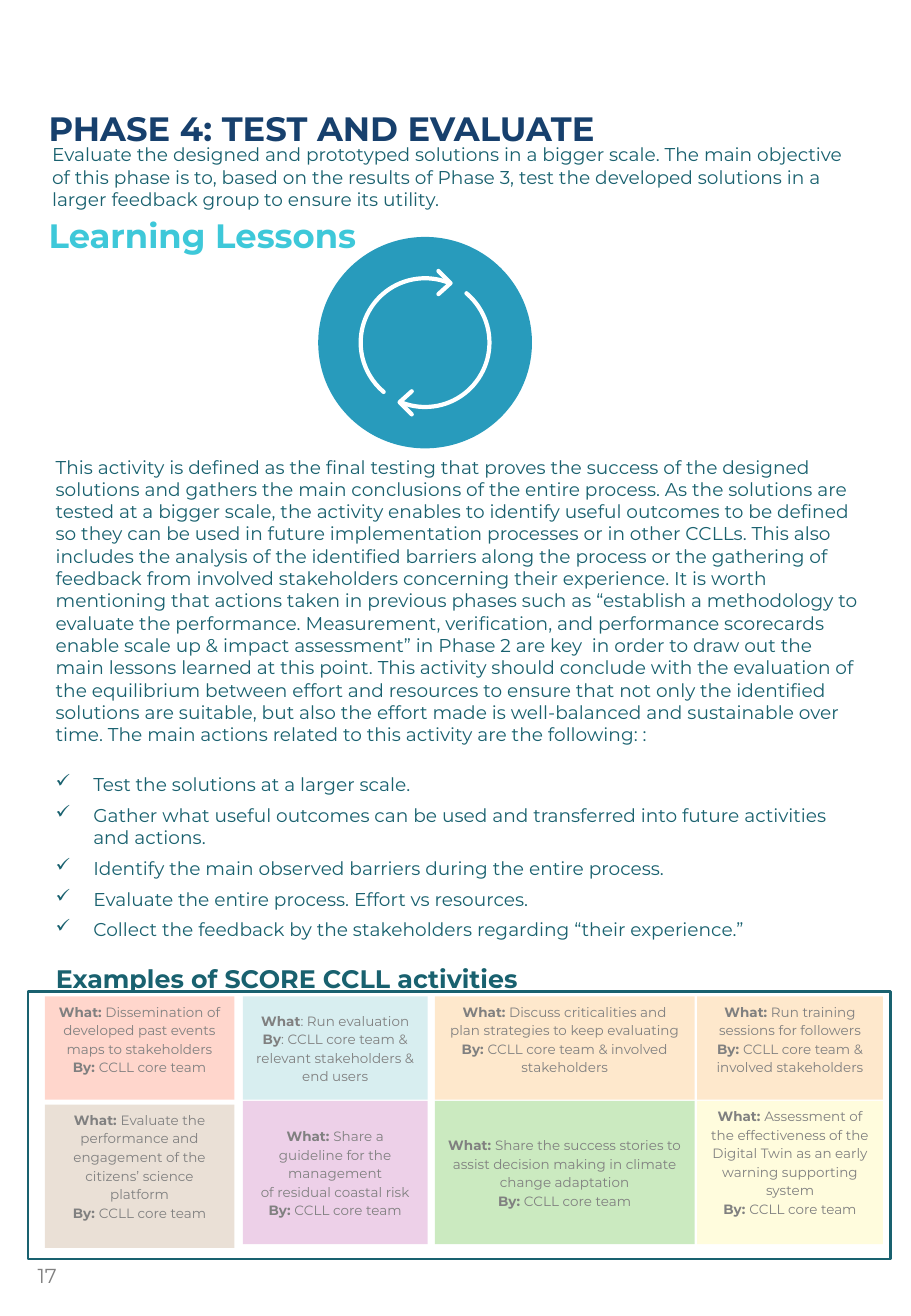
from dataclasses import dataclass

from lxml import etree
from pptx import Presentation
from pptx import util as u
from pptx.dml.color import RGBColor
from pptx.enum import shapes, text
from pptx.oxml.ns import qn


@dataclass(frozen=True)
class Theme:
    font: str = "Montserrat"
    teal: str = "19616F"
    navy: str = "17406D"
    cyan: str = "3EC8D9"
    blue: str = "289BBC"
    grey: str = "808080"
    white: str = "FFFFFF"
    heading: float = 20
    subheading: float = 15
    folio: float = 12
    body: float = 11
    card: float = 8


THEME = Theme()
TIGHT = (0.06, 0.02, 0.06, 0.03)
CARD_INSETS = (0.1, 0.04, 0.1, 0.05)
CORE_TEAM = ("By: ", "CCLL core team")
INVOLVED = ("By: ", "CCLL core team & involved stakeholders")

INTRO = (
    "Evaluate the designed and prototyped solutions in a bigger scale. The main objective of "
    "this phase is to, based on the results of Phase 3, test the developed solutions in a "
    "larger feedback group to ensure its utility."
)
ACTIVITY_SENTENCES = [
    "This activity is defined as the final testing that proves the success of the designed "
    "solutions and gathers the main conclusions of the entire process.",
    "As the solutions are tested at a bigger scale, the activity enables to identify useful "
    "outcomes to be defined so they can be used in future implementation processes or in other "
    "CCLLs.",
    "This also includes the analysis of the identified barriers along the process or the "
    "gathering of feedback from involved stakeholders concerning their experience.",
    "It is worth mentioning that actions taken in previous phases such as “establish a "
    "methodology to evaluate the performance.",
    "Measurement, verification, and performance scorecards enable scale up & impact assessment” "
    "in Phase 2 are key  in order to draw out the main lessons learned at this point.",
    "This activity should conclude with the evaluation of the equilibrium between effort and "
    "resources to ensure that not only the identified solutions are suitable, but also the "
    "effort made is well-balanced and sustainable over time.",
    "The main actions related to this activity are the following: :",
]
ACTIONS = [
    "Test the solutions at a larger scale.",
    "Gather what useful outcomes can be used and transferred into future activities and actions.",
    "Identify the main observed barriers during the entire process.",
    "Evaluate the entire process. Effort vs resources.",
    "Collect the feedback by the stakeholders regarding “their experience.”",
]

# Columns: left offset and width; rows: top offset and height, all inside the frame
COLUMNS = [(0.14, 1.56), (1.77, 1.52), (3.35, 2.14), (5.51, 1.53)]
ROWS = [(0.04, 0.85), (0.9, 1.18)]
# Each card: fill, opacity in percent, centred vertically, extra drop, lines of (bold, plain)
CARDS = [
    [
        ("FF3300", 20, False, 0,
         [("What:", " Dissemination of developed past events maps to stakeholders"), CORE_TEAM]),
        ("D8EEF0", 100, True, 0,
         [("What", ": Run evaluation"),
          ("By", ": CCLL core team & relevant stakeholders & end users")]),
        ("FE8F00", 20, False, 0,
         [("What:", " Discuss criticalities and plan strategies to keep evaluating"), INVOLVED]),
        ("FE8F00", 20, False, 0,
         [("What:", " Run training sessions for followers"), INVOLVED]),
    ],
    [
        ("996633", 20, False, 0.03,
         [("What: ", "Evaluate the performance and engagement of the citizens’ science platform"),
          CORE_TEAM]),
        ("A51890", 20, True, 0,
         [("What: ", "Share a guideline for the management"),
          ("", "of residual coastal risk"), CORE_TEAM]),
        ("CBEAC0", 100, True, 0,
         [("What: ", "Share the success stories to assist decision making in climate change "
                     "adaptation"), CORE_TEAM]),
        ("FFFCDD", 100, False, 0,
         [("What: ", "Assessment of the effectiveness of the Digital Twin as an early warning "
                     "supporting system"), CORE_TEAM]),
    ],
]


def inches(*lengths):
    return [u.Inches(length) for length in lengths]


def set_all(target, **values):
    for name, value in values.items():
        setattr(target, name, value)


def paint(shape, fill=None, line=None, width=1.5, opacity=100):
    shape.shadow.inherit = False
    if fill:
        shape.fill.solid()
        shape.fill.fore_color.rgb = RGBColor.from_string(fill)
        if opacity < 100:
            colour = shape.fill._xPr.find(".//" + qn("a:srgbClr"))
            etree.SubElement(colour, qn("a:alpha"), val=str(opacity * 1000))
    else:
        shape.fill.background()
    if line:
        shape.line.color.rgb = RGBColor.from_string(line)
        shape.line.width = u.Pt(width)
    else:
        shape.line.fill.background()
    return shape


def set_frame(shape, insets=(0.1, 0.05, 0.1, 0.05), anchor=text.MSO_ANCHOR.TOP):
    left, top, right, bottom = inches(*insets)
    set_all(shape.text_frame, word_wrap=True, vertical_anchor=anchor, margin_left=left,
            margin_top=top, margin_right=right, margin_bottom=bottom)
    return shape.text_frame


def write(frame, runs, size, colour, bullet=None, **layout):
    """Append a paragraph of (words, bold) runs."""
    first = frame.paragraphs[0]
    paragraph = frame.add_paragraph() if first.runs else first
    if bullet:
        properties = paragraph._p.get_or_add_pPr()
        properties.set("marL", str(u.Inches(0.31)))
        properties.set("indent", str(u.Inches(-0.31)))
        etree.SubElement(properties, qn("a:buChar"), char=bullet)
    set_all(paragraph, **{"alignment": text.PP_ALIGN.LEFT, **layout})
    for words, bold in runs:
        run = paragraph.add_run()
        run.text = words
        set_all(run.font, name=THEME.font, size=u.Pt(size), bold=bold)
        run.font.color.rgb = RGBColor.from_string(colour)


def add_intro(slide, box):
    panel = paint(slide.shapes.add_shape(shapes.MSO_SHAPE.RECTANGLE, *inches(*box)), THEME.white)
    write(set_frame(panel), [(INTRO, False)], THEME.body, THEME.teal)


def add_cycle_icon(slide, left, top, width, height):
    paint(slide.shapes.add_shape(shapes.MSO_SHAPE.OVAL, *inches(left, top, width, height)),
          THEME.blue)
    centre_x, centre_y, radius = left + width / 2, top + height / 2, 0.53
    for sign, start, end in ((1, 130, 292), (-1, 310, 112)):
        arc = slide.shapes.add_shape(
            shapes.MSO_SHAPE.ARC,
            *inches(centre_x - radius, centre_y - radius, 2 * radius, 2 * radius))
        arc.adjustments[0], arc.adjustments[1] = start * 0.6, end * 0.6
        tip = [inches(centre_x + sign * x, centre_y + sign * y)
               for x, y in ((0.11, -0.59), (0.21, -0.49), (0.11, -0.4))]
        builder = slide.shapes.build_freeform(*tip[0])
        builder.add_line_segments(tip[1:], close=False)
        for stroke in (arc, builder.convert_to_shape()):
            paint(stroke, line=THEME.white, width=2.5)
            stroke.line._get_or_add_ln().set("cap", "rnd")


def add_activity(slide, box):
    frame = set_frame(slide.shapes.add_textbox(*inches(*box)))
    write(frame, [(" ".join(ACTIVITY_SENTENCES), False)], THEME.body, THEME.teal,
          space_after=u.Pt(16.4))
    for action in ACTIONS:
        write(frame, [(action, False)], THEME.body, THEME.teal, "✓", space_after=u.Pt(5))


def add_headings(slide, box):
    frame = set_frame(slide.shapes.add_textbox(*inches(*box)), (0, 0, 0, 0))
    write(frame, [("PHASE 4: TEST AND EVALUATE", True)], THEME.heading, THEME.navy,
          line_spacing=1.1, space_after=u.Pt(37))
    write(frame, [("Learning Lessons", True)], THEME.heading, THEME.cyan, line_spacing=1.1)


def add_label(slide, box, words, size, colour, bold):
    frame = set_frame(slide.shapes.add_textbox(*inches(*box)), TIGHT)
    write(frame, [(words, bold)], size, colour, line_spacing=1.15)


def add_examples(slide, left, top, width, height):
    add_label(slide, (left + 0.17, top - 0.29, 5.23, 0.38),
              "Examples of SCORE CCLL activities", THEME.subheading, THEME.teal, True)
    rectangle = shapes.MSO_SHAPE.RECTANGLE
    paint(slide.shapes.add_shape(rectangle, *inches(left, top, width, height)), line=THEME.teal)
    for (row_top, row_height), cards in zip(ROWS, CARDS):
        for (column, card_width), (fill, opacity, centred, drop, lines) in zip(COLUMNS, cards):
            card = slide.shapes.add_shape(
                rectangle, *inches(left + column, top + row_top + drop, card_width, row_height))
            paint(card, fill, opacity=opacity)
            anchor = text.MSO_ANCHOR.MIDDLE if centred else text.MSO_ANCHOR.TOP
            frame = set_frame(card, CARD_INSETS, anchor)
            for label, words in lines:
                runs = [(label, True), (words, False)] if label else [(words, False)]
                write(frame, runs, THEME.card, THEME.grey,
                      alignment=text.PP_ALIGN.CENTER, line_spacing=1.15)


def main():
    deck = Presentation()
    deck.slide_width, deck.slide_height = inches(7.5, 10.83)
    slide = deck.slides.add_slide(deck.slide_layouts[6])
    add_intro(slide, (0.33, 1.13, 6.79, 0.66))
    add_cycle_icon(slide, 2.62, 1.95, 1.76, 1.74)
    add_activity(slide, (0.36, 3.7, 6.85, 4.13))
    add_headings(slide, (0.4, 0.85, 7.1, 0.55))
    add_examples(slide, 0.23, 8.16, 7.1, 2.2)
    add_label(slide, (0.25, 10.35, 0.6, 0.34), "17", THEME.folio, THEME.grey, False)
    deck.save("out.pptx")


if __name__ == "__main__":
    main()
